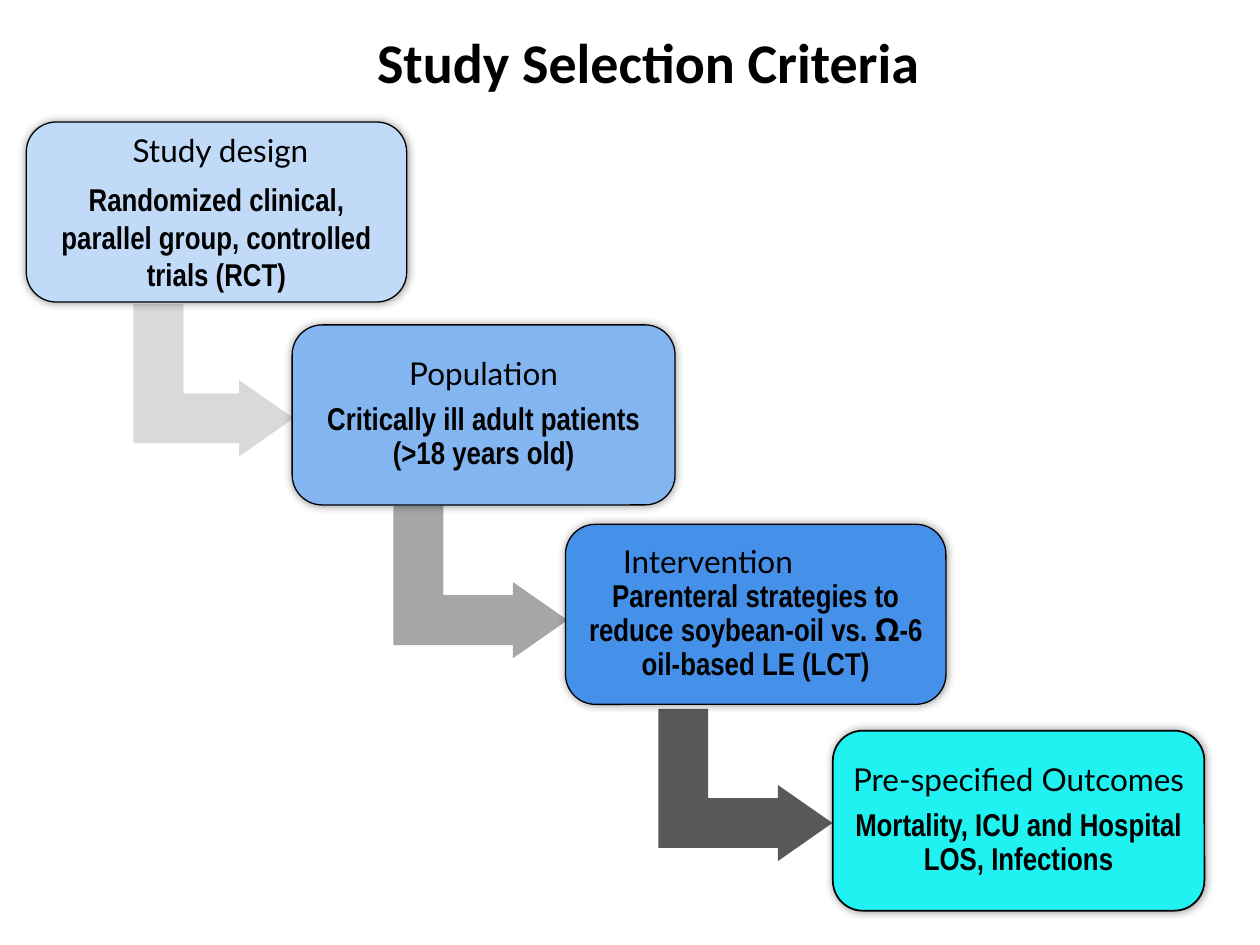
from typing import NamedTuple, Optional

from lxml import etree
from pptx import Presentation
from pptx.dml.color import RGBColor
from pptx.enum.shapes import MSO_SHAPE
from pptx.enum.text import MSO_ANCHOR, MSO_AUTO_SIZE, PP_ALIGN
from pptx.oxml.ns import qn
from pptx.util import Cm, Pt

ROUND = MSO_SHAPE.ROUNDED_RECTANGLE
BENT = MSO_SHAPE.BENT_UP_ARROW
MID = MSO_ANCHOR.MIDDLE
GROW = MSO_AUTO_SIZE.SHAPE_TO_FIT_TEXT
LEFT = PP_ALIGN.LEFT
CENTER = PP_ALIGN.CENTER
BLACK = "000000"
HEAD = "Lato"
BODY = "Arial Narrow"
HIGH = 3.63
PAD = 0.18
BEND = (0.328, 0.25, 0.358)


class Run(NamedTuple):
    text: str
    font: str = BODY
    bold: bool = True
    size: float = 18


class Para(NamedTuple):
    runs: list[Run]
    after: float = 6.3
    indent: float = 0
    align: PP_ALIGN = CENTER


class Arrow(NamedTuple):
    left: float
    top: float
    high: float
    fill: str


class Step(NamedTuple):
    left: float
    top: float
    wide: float
    fill: str
    paras: list[Para]
    arrow: Optional[Arrow] = None
    space: float = 0.9
    line: float = 0.75


def head(text: str) -> Para:
    return Para([Run(text, HEAD, False)])


def body(*runs: Run) -> Para:
    return Para(list(runs))


STEPS = [
    Step(0.53, 2.46, 7.67, "C1DAF8",
         [head(" Study design"),
          body(Run("Randomized clinical, parallel group, controlled trials (RCT)"))],
         Arrow(2.77, 6.05, 3.23, "D9D9D9"), space=1.0),
    Step(5.89, 6.55, 7.72, "83B6F1",
         [head("Population"),
          body(Run("Critically ill adult patients (>18 years old)"))],
         Arrow(8.15, 9.98, 3.51, "A6A6A6")),
    Step(11.4, 10.57, 7.67, "4591E9",
         [Para([Run("Intervention", HEAD, False)], 0, 0.8, LEFT),
          body(Run("Parenteral strategies to reduce soybean-oil vs. "),
               Run("Ω", "Noto Sans"), Run("-6 oil-based LE (LCT)"))],
         Arrow(13.49, 14.07, 3.51, "595959")),
    Step(16.79, 14.73, 7.49, "20F2F2",
         [head("Pre-specified Outcomes"),
          body(Run("Mortality, ICU and Hospital LOS, Infections"))],
         line=1),
]


def tint(color, code: str) -> None:
    color.rgb = RGBColor.from_string(code)


def add_run(para, run: Run) -> None:
    part = para.add_run()
    part.text = run.text
    font = part.font
    font.name, font.bold, font.size = run.font, run.bold, Pt(run.size)
    tint(font.color, BLACK)


def add_glow(shape) -> None:
    list_ = shape._element.spPr.find(qn("a:effectLst"))
    glow = etree.SubElement(list_, qn("a:outerShdw"), blurRad=str(Pt(5)),
                            dist="0", dir="0", rotWithShape="0")
    shade = etree.SubElement(glow, qn("a:srgbClr"), val=BLACK)
    etree.SubElement(shade, qn("a:alpha"), val="40000")


def add_arrow(slide, arrow: Arrow) -> None:
    shape = slide.shapes.add_shape(BENT, Cm(arrow.left), Cm(arrow.top),
                                   Cm(3.07), Cm(arrow.high))
    shape.rotation = 90
    for i, val in enumerate(BEND):
        shape.adjustments[i] = val
    shape.shadow.inherit = False
    shape.fill.solid()
    tint(shape.fill.fore_color, arrow.fill)
    shape.line.fill.background()


def add_card(slide, step: Step) -> None:
    shape = slide.shapes.add_shape(ROUND, Cm(step.left), Cm(step.top),
                                   Cm(step.wide), Cm(HIGH))
    shape.shadow.inherit = False
    shape.fill.solid()
    tint(shape.fill.fore_color, step.fill)
    tint(shape.line.color, BLACK)
    shape.line.width = Pt(step.line)
    add_glow(shape)


def add_text(slide, step: Step) -> None:
    box = slide.shapes.add_textbox(
        Cm(step.left + PAD), Cm(step.top + PAD),
        Cm(step.wide - 2 * PAD), Cm(HIGH - 2 * PAD))
    frame = box.text_frame
    frame.word_wrap = True
    frame.vertical_anchor = MID
    frame.margin_left = frame.margin_right = Cm(PAD)
    frame.margin_top = frame.margin_bottom = Cm(PAD)
    for i, item in enumerate(step.paras):
        para = frame.add_paragraph() if i else frame.paragraphs[0]
        para.alignment = item.align
        para.line_spacing = step.space
        para.space_after = Pt(item.after)
        if item.indent:
            para._p.get_or_add_pPr().set("marL", str(Cm(item.indent)))
        for run in item.runs:
            add_run(para, run)


def add_title(slide) -> None:
    box = slide.shapes.add_textbox(Cm(2.39), Cm(0.43), Cm(20.73), Cm(1.63))
    frame = box.text_frame
    frame.word_wrap = True
    frame.auto_size = GROW
    para = frame.paragraphs[0]
    para.alignment = CENTER
    para._p.get_or_add_pPr().set("indent", str(Cm(0.64)))
    add_run(para, Run("Study Selection Criteria", "Calibri", True, 32))


def main() -> None:
    deck = Presentation()
    deck.slide_width, deck.slide_height = Cm(25.4), Cm(19.05)
    slide = deck.slides.add_slide(deck.slide_layouts[6])
    add_title(slide)
    for step in STEPS:
        if step.arrow:
            add_arrow(slide, step.arrow)
        add_card(slide, step)
        add_text(slide, step)
    deck.save("out.pptx")


if __name__ == "__main__":
    main()
